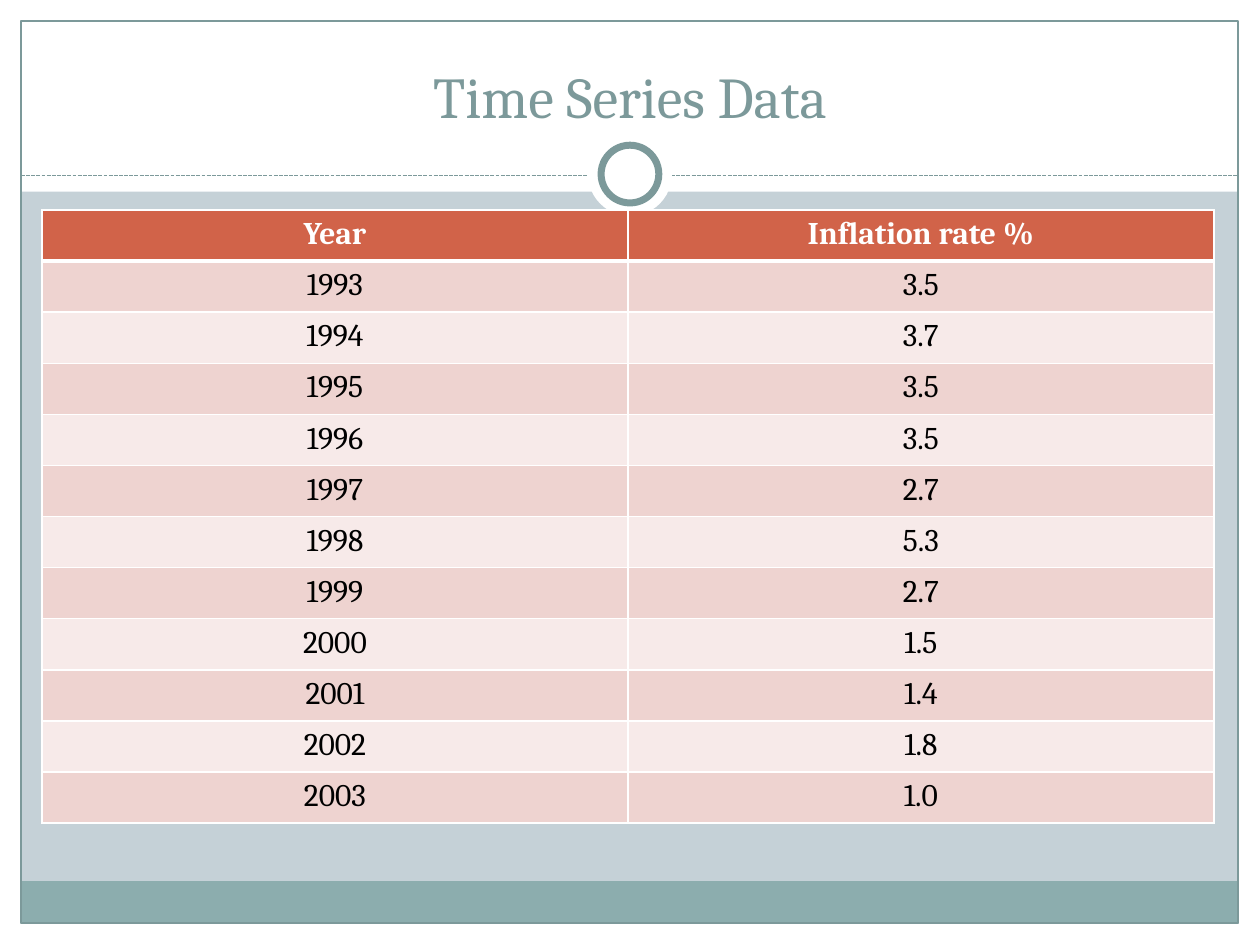
from lxml import etree
from pptx import Presentation
from pptx import util as u
from pptx.dml.color import RGBColor
from pptx.enum import dml, shapes, text
from pptx.oxml.ns import qn

WHITE, TEAL, FOOTER, BACKDROP = "FFFFFF", "7C999A", "8CADAE", "C5D1D7"
HEADER, BANDS = "D16349", ("EED3D0", "F7EAE9")
WIDTH, HEIGHT, MARGIN = 720, 540, 12

INFLATION = [
    ("Year", "Inflation rate %"),
    ("1993", "3.5"), ("1994", "3.7"), ("1995", "3.5"), ("1996", "3.5"),
    ("1997", "2.7"), ("1998", "5.3"), ("1999", "2.7"), ("2000", "1.5"),
    ("2001", "1.4"), ("2002", "1.8"), ("2003", "1.0"),
]


def color(hex_value):
    return RGBColor.from_string(hex_value)


def points(*values):
    return [u.Pt(value) for value in values]


class SlideBuilder:
    font_name = "Cambria"

    def __init__(self, slide):
        self.slide = slide

    def background(self, fill):
        self.slide.background.fill.solid()
        self.slide.background.fill.fore_color.rgb = color(fill)

    def format_text(self, frame, size, ink, bold=False):
        paragraph = frame.paragraphs[0]
        paragraph.alignment = text.PP_ALIGN.CENTER
        font = paragraph.runs[0].font
        values = {"name": self.font_name, "size": u.Pt(size), "bold": bold}
        for name, value in values.items():
            setattr(font, name, value)
        font.color.rgb = color(ink)

    def shape(self, kind, box, fill=None, line=None, weight=0.75):
        item = self.slide.shapes.add_shape(kind, *points(*box))
        item.shadow.inherit = False
        if fill:
            item.fill.solid()
            item.fill.fore_color.rgb = color(fill)
        else:
            item.fill.background()
        if line:
            item.line.color.rgb = color(line)
            item.line.width = u.Pt(weight)
        else:
            item.line.fill.background()

    def dashed_rule(self, left, right, y, ink):
        rule = self.slide.shapes.add_connector(
            shapes.MSO_CONNECTOR.STRAIGHT, *points(left, y, right, y))
        rule.line.color.rgb = color(ink)
        rule.line.width = u.Pt(0.75)
        rule.line.dash_style = dml.MSO_LINE.SQUARE_DOT
        etree.SubElement(rule.element.spPr, qn("a:effectLst"))

    def title(self, wording, box):
        title = self.slide.shapes.title
        # Bring the title in front of the bands
        self.slide.shapes.element.append(title.element)
        for name, value in zip(("left", "top", "width", "height"), points(*box)):
            setattr(title, name, value)
        frame = title.text_frame
        frame.text = wording
        settings = {"vertical_anchor": text.MSO_ANCHOR.BOTTOM, "word_wrap": True,
                    "auto_size": text.MSO_AUTO_SIZE.NONE}
        for name, value in settings.items():
            setattr(frame, name, value)
        self.format_text(frame, 33, TEAL)

    def cell_borders(self, tc, weights):
        properties = tc.get_or_add_tcPr()
        for side, weight in weights.items():
            border = etree.SubElement(properties, qn(f"a:ln{side}"), w=str(u.Pt(weight)))
            fill = etree.SubElement(border, qn("a:solidFill"))
            etree.SubElement(fill, qn("a:srgbClr"), val=WHITE)

    def table(self, data, box):
        holder = self.slide.shapes.add_table(len(data), len(data[0]), *points(*box))
        table = holder.table
        for row in table.rows:
            row.height = u.Pt(box[3] / len(data))
        cell_elements = iter(holder.element.xpath(".//a:tc"))
        for r, values in enumerate(data):
            is_header = r == 0
            # A thick rule separates the header from the body
            weights = {"L": 1, "R": 1, "T": 3 if r == 1 else 1, "B": 3 if is_header else 1}
            for c, value in enumerate(values):
                self.cell_borders(next(cell_elements), weights)
                cell = table.cell(r, c)
                cell.fill.solid()
                cell.fill.fore_color.rgb = color(HEADER if is_header else BANDS[(r - 1) % 2])
                cell.text = value
                self.format_text(cell.text_frame, 18,
                                 WHITE if is_header else "000000", is_header)


def main():
    deck = Presentation()
    deck.slide_width, deck.slide_height = points(WIDTH, HEIGHT)
    builder = SlideBuilder(deck.slides.add_slide(deck.slide_layouts[5]))
    rectangle, oval = shapes.MSO_SHAPE.RECTANGLE, shapes.MSO_SHAPE.OVAL

    # White margins and title band, then the footer strip
    builder.background(BACKDROP)
    for box in [(0, HEIGHT - MARGIN, WIDTH, MARGIN), (0, 0, WIDTH, 109.5),
                (0, 0, MARGIN, HEIGHT), (WIDTH - MARGIN, 0, MARGIN, HEIGHT)]:
        builder.shape(rectangle, box, WHITE)
    builder.shape(rectangle, (11.75, 503.5, 695.5, 24.5), FOOTER)

    # Frame, divider and ring
    builder.shape(rectangle, (MARGIN, MARGIN, 695.5, 515.5), line=TEAL)
    builder.dashed_rule(MARGIN, WIDTH - MARGIN, 100.5, TEAL)
    builder.shape(oval, (336, 75.5, 48, 48), WHITE)
    builder.shape(oval, (343.5, 83, 33, 33), WHITE, TEAL, 4)

    # Title and data
    builder.title("Time Series Data", (24, 18, 672, 60))
    builder.table(INFLATION, (24, 120, 669.6, 350.4))
    deck.save("out.pptx")


if __name__ == "__main__":
    main()
